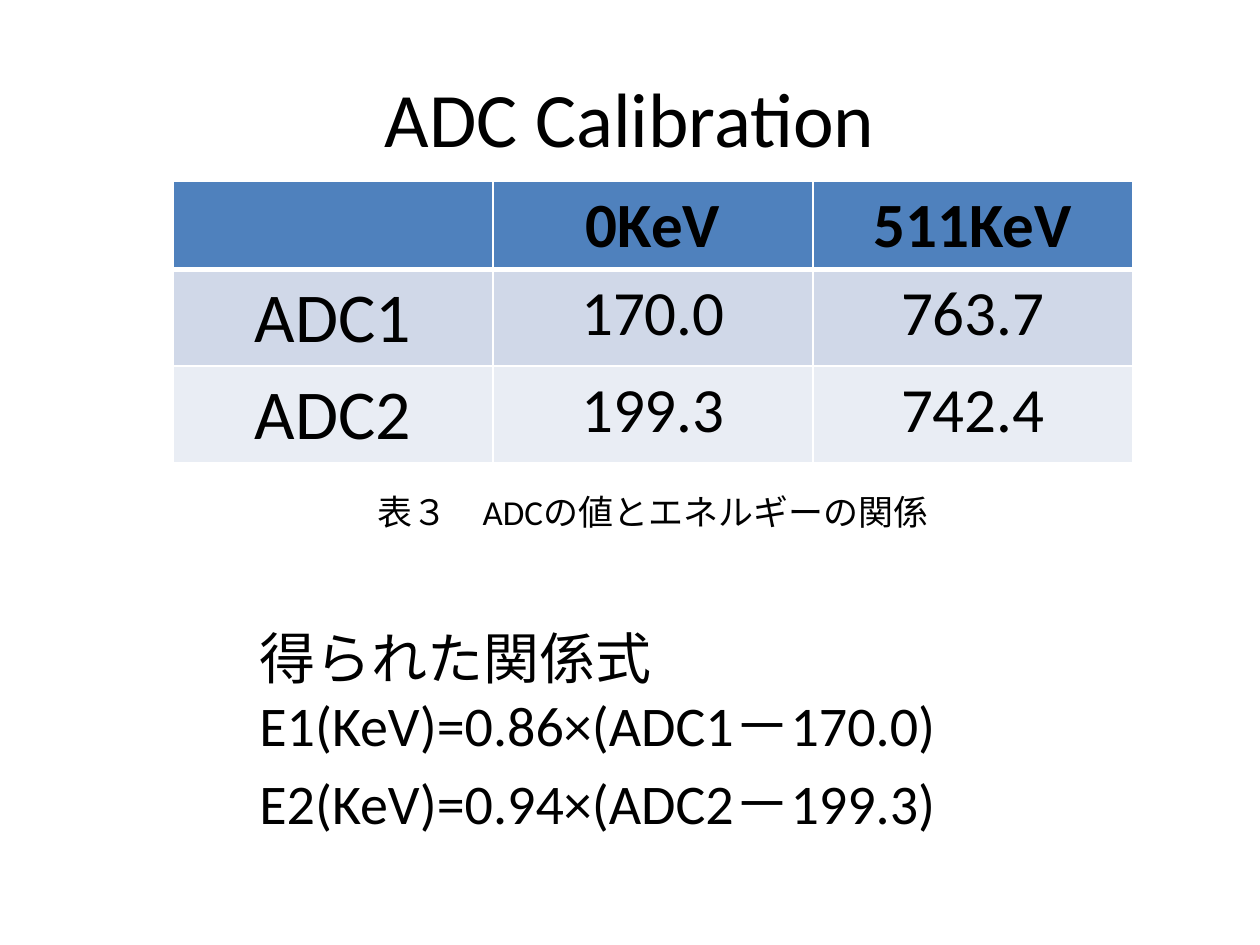
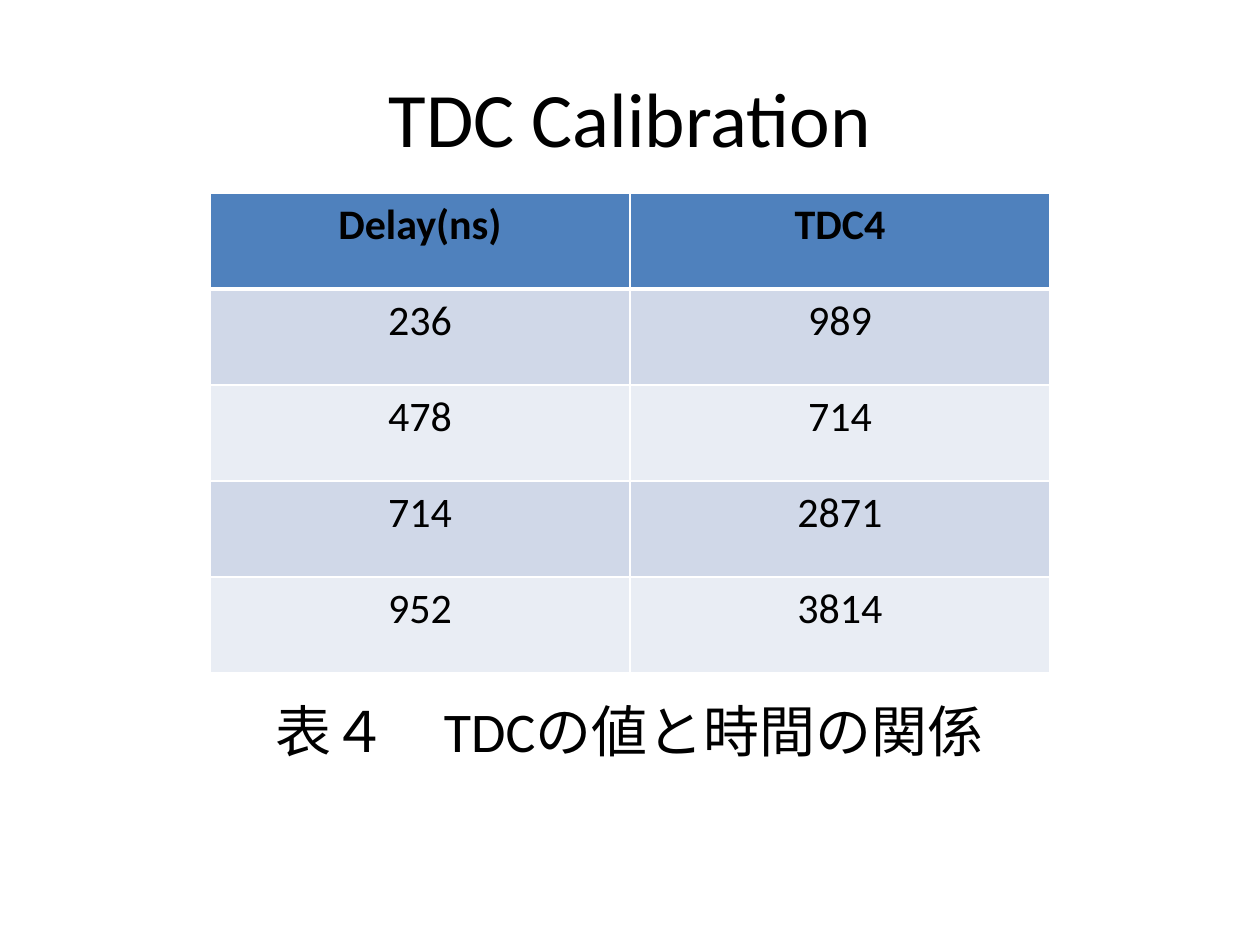
from pptx import Presentation
from pptx.dml.color import RGBColor
from pptx.enum.text import MSO_ANCHOR, PP_ALIGN
from pptx.oxml import parse_xml
from pptx.oxml.ns import nsdecls
from pptx.util import Emu, Pt

FONT = "Calibri"
BLACK = RGBColor(0x00, 0x00, 0x00)
WHITE = RGBColor(0xFF, 0xFF, 0xFF)
BLUE = RGBColor(0x4F, 0x81, 0xBD)
BANDS = [RGBColor(0xE9, 0xED, 0xF4), RGBColor(0xD0, 0xD8, 0xE8)]

PAGE = (1260, 945)
TITLE = (63, 38, 1134, 157)

SLIDES = [
    {
        "title": "ADC Calibration",
        "table": {
            "at": (173, 181),
            "wide": 320,
            "rows": [88, 97, 97],
            "sizes": [40, 36, 36],
            "data": [
                ["", "0KeV", "511KeV"],
                ["ADC1", "170.0", "763.7"],
                ["ADC2", "199.3", "742.4"],
            ],
        },
        "notes": [
            ((365, 484, 770, 55), 20, PP_ALIGN.LEFT,
             ["表３　ADCの値とエネルギーの関係"]),
            ((247, 617, 867, 229), 32, PP_ALIGN.LEFT,
             ["得られた関係式\vE1(KeV)=0.86×(ADC1－170.0)",
              "E2(KeV)=0.94×(ADC2－199.3)"]),
        ],
    },
    {
        "title": "TDC Calibration",
        "table": {
            "at": (210, 193),
            "wide": 420,
            "rows": [96] * 5,
            "sizes": [24, 24],
            "data": [
                ["Delay(ns)", "TDC4"],
                ["236", "989"],
                ["478", "714"],
                ["714", "2871"],
                ["952", "3814"],
            ],
        },
        "notes": [
            ((63, 690, 1134, 80), 32, PP_ALIGN.CENTER,
             ["表４　TDCの値と時間の関係"]),
        ],
    },
]


def px(count):
    return Emu(round(count * 914400 / 126))


def style(para, size, align, bold=False):
    para.alignment = align
    for run in para.runs:
        font = run.font
        font.name, font.size, font.bold = FONT, Pt(size), bold
        font.color.rgb = BLACK


def add_text(slide, at, size, align, lines, anchor=MSO_ANCHOR.TOP):
    frame = slide.shapes.add_textbox(*map(px, at)).text_frame
    frame.word_wrap = True
    frame.vertical_anchor = anchor
    frame.text = "\n".join(lines)
    for num, para in enumerate(frame.paragraphs):
        style(para, size, align)
        if num:
            para.space_before = Pt(size * 0.2)


def add_edges(cell, row):
    props = cell._tc.get_or_add_tcPr()
    widths = {"L": 1, "R": 1, "T": 3 if row == 1 else 1, "B": 1 if row else 3}
    for side, width in widths.items():
        props.append(parse_xml(
            f'<a:ln{side} {nsdecls("a")} w="{Pt(width)}"><a:solidFill>'
            f'<a:srgbClr val="{WHITE}"/></a:solidFill></a:ln{side}>'))


def add_grid(slide, at, wide, rows, sizes, data):
    count = len(sizes)
    area = (*at, wide * count, sum(rows))
    grid = slide.shapes.add_table(len(rows), count, *map(px, area)).table
    for col in grid.columns:
        col.width = px(wide)
    for row, (tall, texts) in enumerate(zip(rows, data)):
        grid.rows[row].height = px(tall)
        for col, text in enumerate(texts):
            cell = grid.cell(row, col)
            add_edges(cell, row)
            cell.fill.solid()
            cell.fill.fore_color.rgb = BANDS[row % 2] if row else BLUE
            cell.text_frame.text = text
            style(cell.text_frame.paragraphs[0], sizes[col],
                  PP_ALIGN.CENTER, row == 0)


def main():
    deck = Presentation()
    deck.slide_width, deck.slide_height = map(px, PAGE)
    for item in SLIDES:
        slide = deck.slides.add_slide(deck.slide_layouts[6])
        add_text(slide, TITLE, 44, PP_ALIGN.CENTER, [item["title"]],
                 MSO_ANCHOR.MIDDLE)
        add_grid(slide, **item["table"])
        for note in item["notes"]:
            add_text(slide, *note)
    deck.save("out.pptx")


if __name__ == "__main__":
    main()
